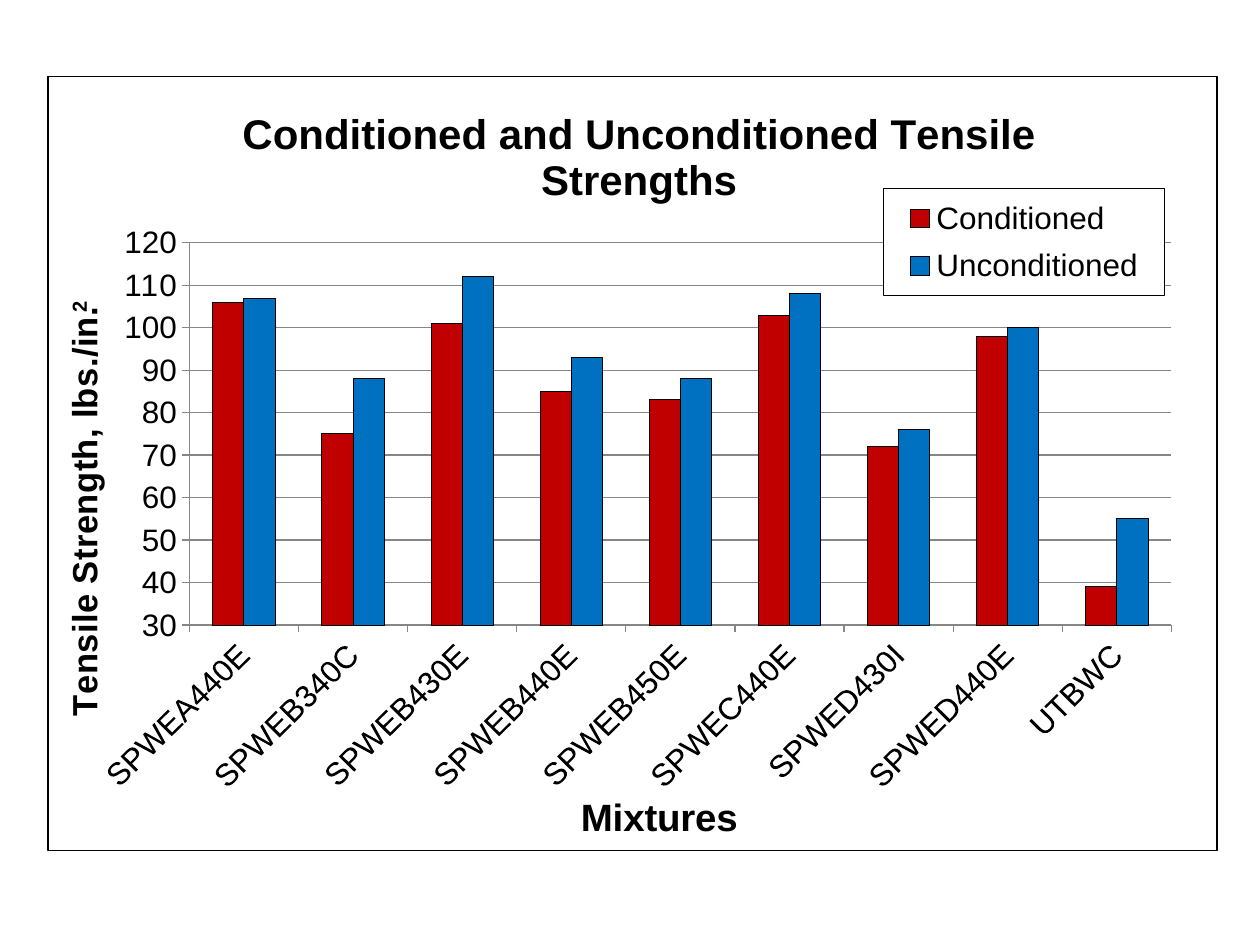
from lxml import etree
from pptx import Presentation, util as u
from pptx.chart.data import CategoryChartData
from pptx.dml.color import RGBColor
from pptx.enum import chart as kinds, shapes
from pptx.oxml import parse_xml
from pptx.oxml.ns import nsdecls, qn

BLACK = RGBColor(0x00, 0x00, 0x00)
WHITE = RGBColor(0xFF, 0xFF, 0xFF)
GRAY = RGBColor(0x86, 0x86, 0x86)
RED = RGBColor(0xC0, 0x00, 0x00)
BLUE = RGBColor(0x00, 0x70, 0xC0)

FRAME = (0.038, 0.081, 0.928, 0.819)
MIXTURES = ["SPWEA440E", "SPWEB340C", "SPWEB430E", "SPWEB440E", "SPWEB450E",
            "SPWEC440E", "SPWED430I", "SPWED440E", "UTBWC"]
STRENGTHS = [
    ("Conditioned", RED, (106, 75, 101, 85, 83, 103, 72, 98, 39)),
    ("Unconditioned", BLUE, (107, 88, 112, 93, 88, 108, 76, 100, 55)),
]


def apply(target, values):
    for name, value in values.items():
        setattr(target, name, value)


def place(element, x, y, w=None, h=None, inner=False):
    for old in element.findall(qn("c:layout")):
        element.remove(old)
    layout = parse_xml(f"<c:layout {nsdecls('c')}><c:manualLayout/></c:layout>")
    settings = [("layoutTarget", "inner")] if inner else []
    settings += [("xMode", "edge"), ("yMode", "edge"), ("x", x), ("y", y)]
    if w:
        settings += [("w", w), ("h", h)]
    for name, value in settings:
        etree.SubElement(layout[0], qn(f"c:{name}")).set("val", str(value))
    overlay = element.find(qn("c:overlay"))
    element.insert(0 if overlay is None else element.index(overlay), layout)


class SlideBuilder:
    def __init__(self, deck):
        self.deck = deck
        self.page = deck.slides.add_slide(deck.slide_layouts[6])

    def font(self, size, bold=False):
        return {"name": "Arial", "size": u.Pt(size), "bold": bold}

    def area(self, shares):
        sizes = (self.deck.slide_width, self.deck.slide_height) * 2
        return [round(share * size) for share, size in zip(shares, sizes)]

    def outline(self, line, color, width):
        line.color.rgb = color
        line.width = u.Pt(width)

    def frame(self, shares):
        box = self.page.shapes.add_shape(shapes.MSO_SHAPE.RECTANGLE, *self.area(shares))
        box.shadow.inherit = False
        box.fill.solid()
        box.fill.fore_color.rgb = WHITE
        self.outline(box.line, BLACK, 0.75)

    def column_chart(self, shares, categories, series):
        data = CategoryChartData(number_format="#,##0")
        data.categories = categories
        for name, _, values in series:
            data.add_series(name, values)
        kind = kinds.XL_CHART_TYPE.COLUMN_CLUSTERED
        chart = self.page.shapes.add_chart(kind, *self.area(shares), data).chart
        apply(chart.font, {"name": "Calibri", "size": u.Pt(10)})
        chart.font.color.rgb = BLACK
        space = chart.element if hasattr(chart, "element") else chart._chartSpace
        space.find(qn("c:chart")).addnext(parse_xml(
            f"<c:spPr {nsdecls('c', 'a')}><a:noFill/><a:ln><a:noFill/></a:ln></c:spPr>"))
        plot = chart.plots[0]
        apply(plot, {"gap_width": 150, "overlap": 0, "vary_by_categories": False})
        for column, (_, color, _) in zip(plot.series, series):
            column.invert_if_negative = False
            column.format.fill.solid()
            column.format.fill.fore_color.rgb = color
            self.outline(column.format.line, BLACK, 0.5)
        place(space.find(".//" + qn("c:plotArea")), 0.121, 0.218, 0.84, 0.501, inner=True)
        return chart

    def chart_title(self, holder, words, size, x, y, superscript=None):
        para = holder.text_frame.paragraphs[0]
        for words, baseline in ((words, None), (superscript, "30000")):
            if words:
                span = para.add_run()
                span.text = words
                apply(span.font, self.font(size, bold=True))
                span.font.color.rgb = BLACK
                if baseline:
                    span._r.get_or_add_rPr().set("baseline", baseline)
        place(holder._element, x, y)

    def axis(self, axis, values):
        apply(axis, {"major_tick_mark": kinds.XL_TICK_MARK.OUTSIDE, **values})
        apply(axis.tick_labels.font, self.font(18))
        self.outline(axis.format.line, GRAY, 0.75)

    def legend(self, chart, x, y, w, h):
        chart.has_legend = True
        legend = chart.legend
        apply(legend, {"position": kinds.XL_LEGEND_POSITION.RIGHT, "include_in_layout": False})
        apply(legend.font, self.font(18))
        place(legend._element, x, y, w, h)
        legend._element.find(qn("c:txPr")).addprevious(parse_xml(
            f"<c:spPr {nsdecls('c', 'a')}>"
            f'<a:solidFill><a:srgbClr val="{WHITE}"/></a:solidFill>'
            f'<a:ln w="9525"><a:solidFill><a:srgbClr val="{BLACK}"/></a:solidFill></a:ln>'
            "</c:spPr>"))


def main():
    deck = Presentation()
    apply(deck, {"slide_width": u.Inches(10), "slide_height": u.Inches(7.5)})
    builder = SlideBuilder(deck)
    builder.frame(FRAME)
    chart = builder.column_chart(FRAME, MIXTURES, STRENGTHS)

    mixtures, strength = chart.category_axis, chart.value_axis
    builder.axis(mixtures, {"has_major_gridlines": False})
    mixtures._element.find(qn("c:txPr")).find(qn("a:bodyPr")).set("rot", "-2700000")
    builder.axis(strength, {"minimum_scale": 30, "maximum_scale": 120, "major_unit": 10,
                            "has_major_gridlines": True})
    builder.outline(strength.major_gridlines.format.line, GRAY, 0.75)
    apply(strength.tick_labels, {"number_format": "#,##0", "number_format_is_linked": False})

    builder.chart_title(chart.chart_title, "Conditioned and Unconditioned Tensile Strengths",
                        24, 0.16, 0.03)
    builder.chart_title(mixtures.axis_title, "Mixtures", 22, 0.45, 0.93)
    builder.chart_title(strength.axis_title, "Tensile Strength, lbs./in.", 20, 0.01, 0.29, "2")
    strength.axis_title.text_frame._txBody.find(qn("a:bodyPr")).set("rot", "-5400000")
    builder.legend(chart, 0.715, 0.147, 0.24, 0.14)
    deck.save("out.pptx")


if __name__ == "__main__":
    main()
